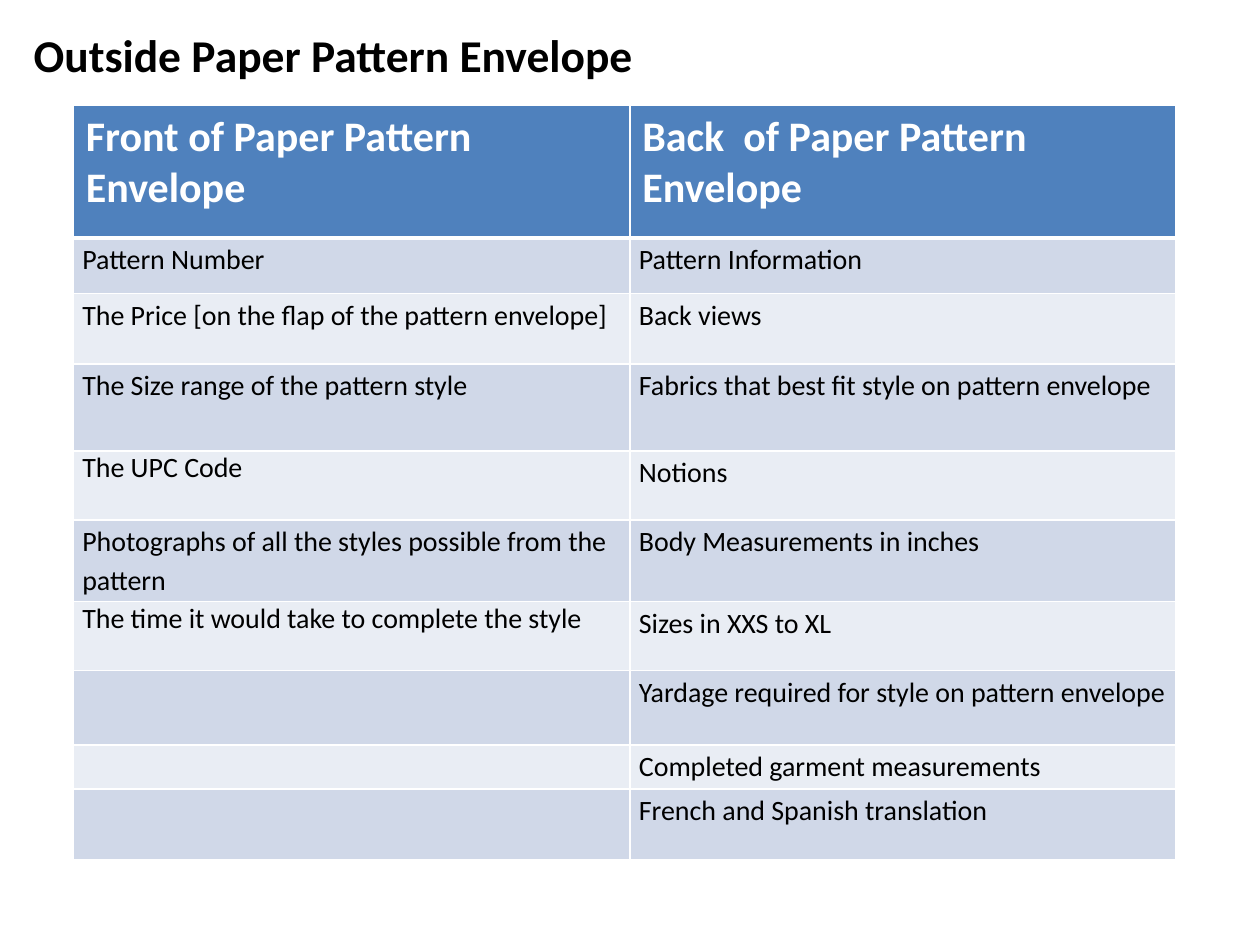
from lxml.etree import SubElement
from pptx import Presentation
from pptx.dml.color import RGBColor
from pptx.oxml.ns import qn
from pptx.util import Cm, Pt

COLORS = {
    "text": "000000",
    "white": "FFFFFF",
    "header": "4F81BD",
    "odd_row": "D0D8E8",
    "even_row": "E9EDF4",
}
FONT = "Calibri"
HEADERS = ["Front of Paper Pattern Envelope", "Back  of Paper Pattern Envelope"]
FRONT_ITEMS = [
    "Pattern Number",
    "The Price [on the flap of the pattern envelope]",
    "The Size range of the pattern style",
    "The UPC Code",
    "Photographs of all the styles possible from the pattern",
    "The time it would take to complete the style",
    "",
    "",
    "",
]
BACK_ITEMS = [
    "Pattern Information",
    "Back views",
    "Fabrics that best fit style on pattern envelope",
    "Notions",
    "Body Measurements in inches",
    "Sizes in XXS to XL",
    "Yardage required for style on pattern envelope",
    "Completed garment measurements",
    "French and Spanish translation",
]
SINGLE_SPACED = {"The UPC Code", "The time it would take to complete the style"}
COLUMN_WIDTHS = [11.22, 11]
ROW_HEIGHTS = [2.68, 1.12, 1.42, 1.75, 1.39, 1.65, 1.39, 1.5, 0.89, 1.42]


def write_text(text_frame, text, *, size, color="text", bold=False, line_spacing=None):
    paragraph = text_frame.paragraphs[0]
    if line_spacing:
        paragraph.line_spacing = line_spacing
    run = paragraph.add_run()
    run.text = text
    run.font.name = FONT
    run.font.size = Pt(size)
    run.font.bold = bold
    run.font.color.rgb = RGBColor.from_string(COLORS[color])


def add_title(slide, text):
    box = slide.shapes.add_textbox(Cm(0.43), Cm(0.43), Cm(23.7), Cm(16.94))
    box.text_frame.word_wrap = True
    write_text(box.text_frame, text, size=26, bold=True)


def set_borders(cell, bottom_width):
    # Borders come before the fill in the cell properties
    properties = cell._tc.get_or_add_tcPr()
    for side, width in (("L", 1), ("R", 1), ("T", 1), ("B", bottom_width)):
        line = SubElement(properties, qn(f"a:ln{side}"), w=str(Pt(width)))
        fill = SubElement(line, qn("a:solidFill"))
        SubElement(fill, qn("a:srgbClr"), val=COLORS["white"])


def style_cell(cell, *, fill, horizontal, vertical, bottom_width=1):
    cell.margin_left = cell.margin_right = Cm(horizontal)
    cell.margin_top = cell.margin_bottom = Cm(vertical)
    set_borders(cell, bottom_width)
    cell.fill.solid()
    cell.fill.fore_color.rgb = RGBColor.from_string(COLORS[fill])


def add_envelope_table(slide):
    frame = slide.shapes.add_table(
        len(ROW_HEIGHTS), len(COLUMN_WIDTHS),
        Cm(1.48), Cm(2.12), Cm(sum(COLUMN_WIDTHS)), Cm(sum(ROW_HEIGHTS)),
    )
    table = frame.table
    for column, width in zip(table.columns, COLUMN_WIDTHS):
        column.width = Cm(width)
    for row, height in zip(table.rows, ROW_HEIGHTS):
        row.height = Cm(height)

    # Header row
    for column, text in enumerate(HEADERS):
        cell = table.cell(0, column)
        style_cell(cell, fill="header", horizontal=0.25, vertical=0.13, bottom_width=3)
        write_text(cell.text_frame, text, size=24, color="white", bold=True)

    # Banded item rows
    for row, items in enumerate(zip(FRONT_ITEMS, BACK_ITEMS), start=1):
        for column, text in enumerate(items):
            cell = table.cell(row, column)
            fill = "odd_row" if row % 2 else "even_row"
            style_cell(cell, fill=fill, horizontal=0.18, vertical=0)
            if text:
                spacing = None if text in SINGLE_SPACED else 1.15
                write_text(cell.text_frame, text, size=16, line_spacing=spacing)


def main():
    presentation = Presentation()
    presentation.slide_width = Cm(25.4)
    presentation.slide_height = Cm(19.05)
    slide = presentation.slides.add_slide(presentation.slide_layouts[6])
    add_title(slide, "Outside Paper Pattern Envelope")
    add_envelope_table(slide)
    presentation.save("out.pptx")


if __name__ == "__main__":
    main()
